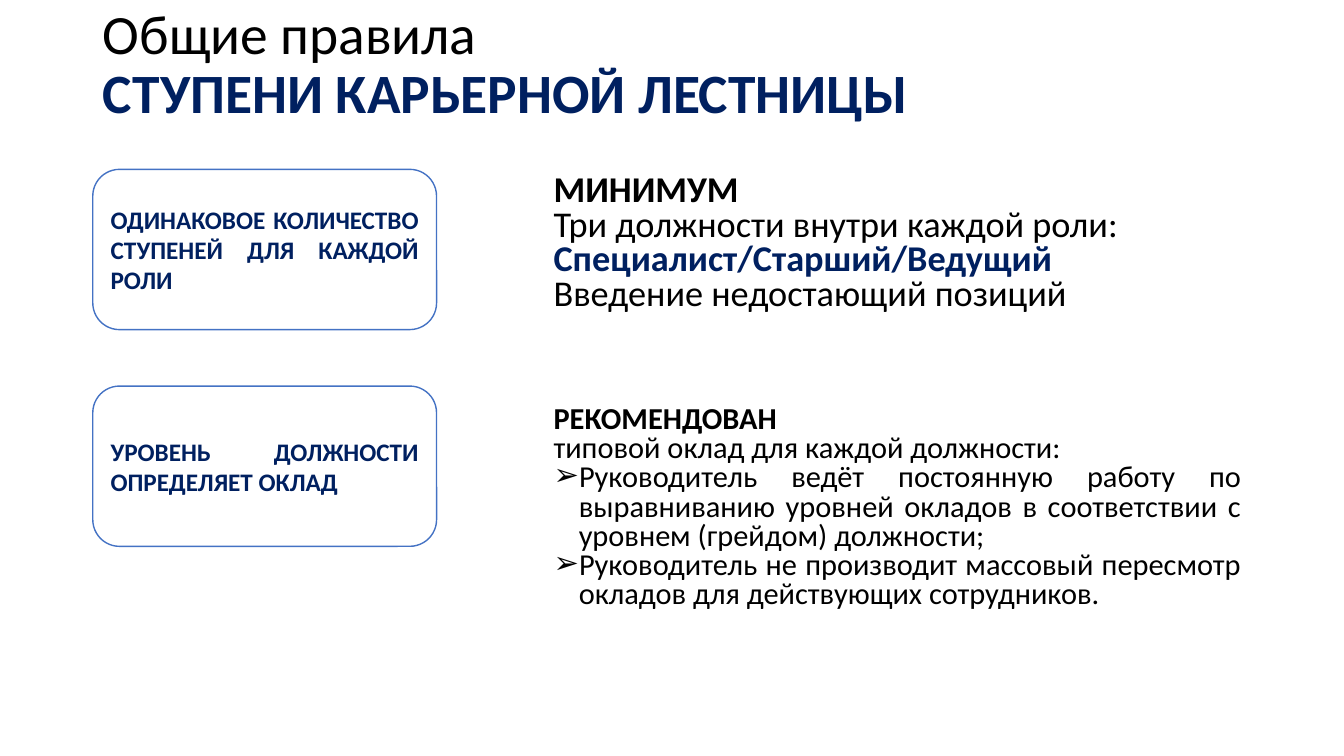
from dataclasses import dataclass

from lxml import etree
from pptx import Presentation
from pptx.dml.color import RGBColor
from pptx.enum.shapes import MSO_SHAPE
from pptx.enum.text import MSO_ANCHOR, MSO_AUTO_SIZE, PP_ALIGN
from pptx.oxml.ns import qn
from pptx.util import Pt

PX = 9144
ROUND = MSO_SHAPE.ROUNDED_RECTANGLE
TOP, MIDDLE = MSO_ANCHOR.TOP, MSO_ANCHOR.MIDDLE
LEFT, JUSTIFY = PP_ALIGN.LEFT, PP_ALIGN.JUSTIFY
FIXED = MSO_AUTO_SIZE.NONE
FONT = "Calibri"
BLACK, NAVY, WHITE, BLUE = "000000", "002060", "FFFFFF", "4472C4"
INDENT = 25


@dataclass(frozen=True)
class Line:
    text: str
    bold: bool = False
    color: str = BLACK
    bullet: str = ""


@dataclass(frozen=True)
class Block:
    slot: int
    top: int
    height: int
    size: float
    lines: tuple[Line, ...]


@dataclass(frozen=True)
class Card:
    top: int
    text: str


BLOCKS = (
    Block(1, 168, 159, 25.9, (
        Line("МИНИМУМ", True),
        Line("Три должности внутри каждой роли:"),
        Line("Специалист/Старший/Ведущий", True, NAVY),
        Line("Введение недостающий позиций"),
    )),
    Block(2, 398, 272, 21.7, (
        Line("РЕКОМЕНДОВАН", True),
        Line("типовой оклад для каждой должности:"),
        Line("Руководитель ведёт постоянную работу по выравниванию уровней "
             "окладов в соответствии с уровнем (грейдом) должности;", bullet="➢"),
        Line("Руководитель не производит массовый пересмотр окладов "
             "для действующих сотрудников.", bullet="➢"),
    )),
)
CARDS = (
    Card(168, "ОДИНАКОВОЕ КОЛИЧЕСТВО СТУПЕНЕЙ ДЛЯ КАЖДОЙ РОЛИ"),
    Card(383, "УРОВЕНЬ ДОЛЖНОСТИ ОПРЕДЕЛЯЕТ ОКЛАД"),
)


def paint(hue: str) -> RGBColor:
    return RGBColor.from_string(hue)


def place(shape, left: int, top: int, width: int, height: int) -> None:
    shape.left, shape.top = left * PX, top * PX
    shape.width, shape.height = width * PX, height * PX


def frame(shape, anchor):
    body = shape.text_frame
    body.word_wrap = True
    body.auto_size = FIXED
    body.vertical_anchor = anchor
    return body


def write(para, line: Line, size: float) -> None:
    run = para.add_run()
    run.text = line.text
    font = run.font
    font.name, font.size, font.bold = FONT, Pt(size), line.bold
    font.color.rgb = paint(line.color)


def mark(para, sign: str) -> None:
    props = para._p.get_or_add_pPr()
    inset = INDENT * PX if sign else 0
    props.set("marL", str(inset))
    props.set("indent", str(-inset))
    if sign:
        etree.SubElement(props, qn("a:buFont")).set("typeface", "Wingdings")
        etree.SubElement(props, qn("a:buChar")).set("char", sign)
        props.find(qn("a:buFont")).set("typeface", "Arial")
    else:
        etree.SubElement(props, qn("a:buNone"))


def head(slide) -> None:
    title = slide.shapes.title
    place(title, 92, 19, 1150, 93)
    para = frame(title, MIDDLE).paragraphs[0]
    para.alignment, para.line_spacing = LEFT, 0.9
    write(para, Line("Общие правила"), 39.6)
    para.add_line_break()
    write(para, Line("СТУПЕНИ КАРЬЕРНОЙ ЛЕСТНИЦЫ", True, NAVY), 39.6)


def fill(slide, block: Block) -> None:
    shape = slide.placeholders[block.slot]
    place(shape, 539, block.top, 702, block.height)
    body = frame(shape, TOP)
    for rank, line in enumerate(block.lines):
        para = body.add_paragraph() if rank else body.paragraphs[0]
        para.alignment = JUSTIFY if line.bullet else LEFT
        para.line_spacing = 0.8
        para.space_before = para.space_after = Pt(0)
        mark(para, line.bullet)
        write(para, line, block.size)


def draw(slide, card: Card) -> None:
    shape = slide.shapes.add_shape(ROUND, 0, 0, PX, PX)
    place(shape, 92, card.top, 341, 159)
    shape.shadow.inherit = False
    shape.fill.solid()
    shape.fill.fore_color.rgb = paint(WHITE)
    shape.line.color.rgb = paint(BLUE)
    shape.line.width = Pt(1)
    para = frame(shape, MIDDLE).paragraphs[0]
    para.alignment = JUSTIFY
    write(para, Line(card.text, True, NAVY), 18)


def main() -> None:
    deck = Presentation()
    deck.slide_width, deck.slide_height = 1333 * PX, 750 * PX
    slide = deck.slides.add_slide(deck.slide_layouts[3])
    head(slide)
    for block in BLOCKS:
        fill(slide, block)
    for card in CARDS:
        draw(slide, card)
    deck.save("out.pptx")


if __name__ == "__main__":
    main()
